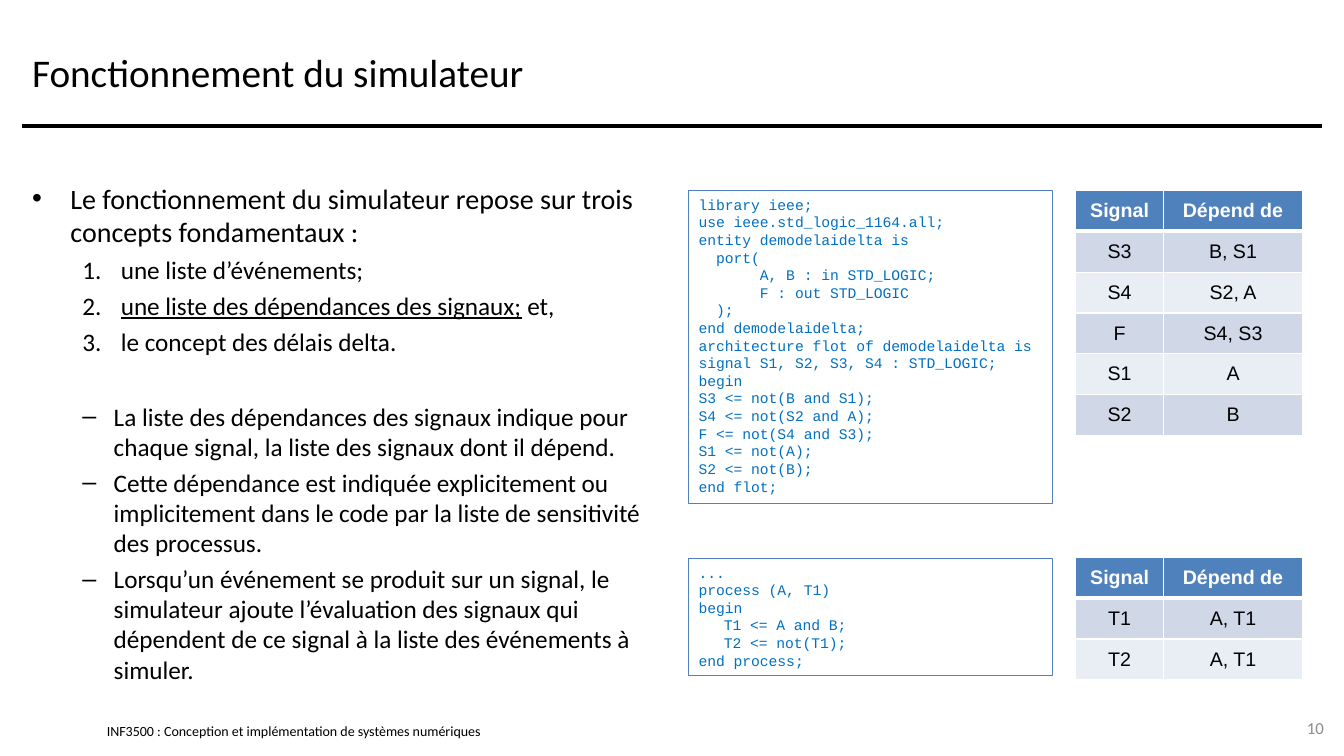
from dataclasses import dataclass

from lxml.etree import SubElement
from pptx import Presentation
from pptx.dml.color import RGBColor
from pptx.enum.shapes import MSO_CONNECTOR, MSO_SHAPE
from pptx.enum.text import MSO_ANCHOR, PP_ALIGN
from pptx.oxml.ns import qn
from pptx.util import Inches, Pt


@dataclass(frozen=True)
class Theme:
    text: str = "000000"
    muted: str = "8C8C8C"
    accent: str = "4F81BD"
    code: str = "0070C0"
    white: str = "FFFFFF"
    bands: tuple = ("D0D8E8", "E9EDF4")
    body_font: str = "Calibri"
    table_font: str = "Arial"
    code_font: str = "Courier New"
    title_size: float = 28
    lead_size: float = 20
    item_size: float = 18
    table_size: float = 14
    number_size: float = 12
    code_size: float = 10.5
    footer_size: float = 10


THEME = Theme()

LEAD = "Le fonctionnement du simulateur repose sur trois concepts fondamentaux :"
CONCEPTS = [
    [("une liste d’événements;", False)],
    [("une liste des dépendances des signaux;", True), (" et,", False)],
    [("le concept des délais delta.", False)],
]
REMARKS = [
    "La liste des dépendances des signaux indique pour chaque signal, "
    "la liste des signaux dont il dépend.",
    "Cette dépendance est indiquée explicitement ou implicitement dans le code "
    "par la liste de sensitivité des processus.",
    "Lorsqu’un événement se produit sur un signal, le simulateur ajoute l’évaluation "
    "des signaux qui dépendent de ce signal à la liste des événements à simuler.",
]
ENTITY_CODE = """library ieee;
use ieee.std_logic_1164.all;
entity demodelaidelta is
  port(
       A, B : in STD_LOGIC;
       F : out STD_LOGIC
  );
end demodelaidelta;
architecture flot of demodelaidelta is
signal S1, S2, S3, S4 : STD_LOGIC;
begin
S3 <= not(B and S1);
S4 <= not(S2 and A);
F <= not(S4 and S3);
S1 <= not(A);
S2 <= not(B);
end flot;"""
PROCESS_CODE = """...
process (A, T1)
begin
\tT1 <= A and B;
\tT2 <= not(T1);
end process;"""
HEADER = ("Signal", "Dépend de")
ENTITY_SIGNALS = [("S3", "B, S1"), ("S4", "S2, A"), ("F", "S4, S3"), ("S1", "A"), ("S2", "B")]
PROCESS_SIGNALS = [("T1", "A, T1"), ("T2", "A, T1")]


def style(paragraph, size, color=THEME.text, name=THEME.body_font, bold=False):
    font = paragraph.font
    font.size, font.name, font.bold = Pt(size), name, bold
    font.color.rgb = RGBColor.from_string(color)


def add_text_box(slide, left, top, width, height, anchor=MSO_ANCHOR.MIDDLE):
    box = slide.shapes.add_textbox(Inches(left), Inches(top), Inches(width), Inches(height))
    frame = box.text_frame
    frame.word_wrap = True
    frame.vertical_anchor = anchor
    return frame


def add_label(slide, text, left, top, width, height, size, color=THEME.text, align=PP_ALIGN.LEFT):
    frame = add_text_box(slide, left, top, width, height)
    paragraph = frame.paragraphs[0]
    paragraph.text = text
    paragraph.alignment = align
    style(paragraph, size, color)
    return frame


def add_rule(slide, left, right, y):
    line = slide.shapes.add_connector(
        MSO_CONNECTOR.STRAIGHT, Inches(left), Inches(y), Inches(right), Inches(y))
    line.line.color.rgb = RGBColor.from_string(THEME.text)
    line.line.width = Pt(3)
    SubElement(line._element.spPr, qn("a:effectLst"))


def add_item(frame, runs, size, margin, hanging, bullet, attributes, space_before):
    first = not frame.text
    paragraph = frame.paragraphs[0] if first else frame.add_paragraph()
    properties = paragraph._p.get_or_add_pPr()
    properties.set("marL", str(Inches(margin)))
    properties.set("indent", str(-Inches(hanging)))
    SubElement(properties, qn("a:buFont"), typeface="Arial")
    SubElement(properties, qn(bullet), attributes)
    if not first:
        paragraph.space_before = Pt(space_before)
    for text, underlined in runs:
        run = paragraph.add_run()
        run.text = text
        if underlined:
            run.font.underline = True
    style(paragraph, size)


def add_body(slide):
    frame = add_text_box(slide, 0.22, 1.75, 6.33, 5.08, MSO_ANCHOR.TOP)
    add_item(frame, [(LEAD, False)], THEME.lead_size, 0.38, 0.38, "a:buChar", {"char": "•"}, 0)
    for runs in CONCEPTS:
        add_item(frame, runs, THEME.item_size, 0.88, 0.38,
                 "a:buAutoNum", {"type": "arabicPeriod"}, 4)
    for index, text in enumerate(REMARKS):
        add_item(frame, [(text, False)], THEME.item_size, 0.81, 0.31,
                 "a:buChar", {"char": "–"}, 4 if index else 32)


def add_code(slide, code, top, height):
    box = slide.shapes.add_shape(
        MSO_SHAPE.RECTANGLE, Inches(6.83), Inches(top), Inches(3.61), Inches(height))
    box.shadow.inherit = False
    box.fill.background()
    box.line.color.rgb = RGBColor.from_string(THEME.accent)
    box.line.width = Pt(0.75)
    frame = box.text_frame
    frame.word_wrap = True
    frame.vertical_anchor = MSO_ANCHOR.TOP
    for index, line in enumerate(code.split("\n")):
        paragraph = frame.add_paragraph() if index else frame.paragraphs[0]
        paragraph.text = line
        paragraph.alignment = PP_ALIGN.LEFT
        tabs = SubElement(paragraph._p.get_or_add_pPr(), qn("a:tabLst"))
        for position in (0.25, 0.5):
            SubElement(tabs, qn("a:tab"), pos=str(Inches(position)), algn="l")
        style(paragraph, THEME.code_size, THEME.code, THEME.code_font)


def set_borders(cell, bottom):
    properties = cell._tc.get_or_add_tcPr()
    widths = {"a:lnL": 1, "a:lnR": 1, "a:lnT": 1, "a:lnB": bottom}
    for position, (side, width) in enumerate(widths.items()):
        line = SubElement(properties, qn(side), w=str(Pt(width)))
        fill = SubElement(line, qn("a:solidFill"))
        SubElement(fill, qn("a:srgbClr"), val=THEME.white)
        properties.insert(position, line)


def add_signal_table(slide, signals, top):
    rows = [HEADER, *signals]
    row_height = 0.405
    table = slide.shapes.add_table(
        len(rows), len(HEADER), Inches(10.67), Inches(top),
        Inches(2.25), Inches(row_height * len(rows))).table
    for column, width in zip(table.columns, (0.87, 1.38)):
        column.width = Inches(width)
    for index, values in enumerate(rows):
        header = index == 0
        fill = THEME.accent if header else THEME.bands[(index - 1) % 2]
        for column, value in enumerate(values):
            cell = table.cell(index, column)
            cell.text = value
            cell.vertical_anchor = MSO_ANCHOR.MIDDLE
            cell.fill.solid()
            cell.fill.fore_color.rgb = RGBColor.from_string(fill)
            set_borders(cell, 3 if header else 1)
            paragraph = cell.text_frame.paragraphs[0]
            paragraph.alignment = PP_ALIGN.CENTER
            style(paragraph, THEME.table_size, THEME.white if header else THEME.text,
                  THEME.table_font, header)


def main():
    presentation = Presentation()
    presentation.slide_width, presentation.slide_height = Inches(13.33), Inches(7.5)
    slide = presentation.slides.add_slide(presentation.slide_layouts[6])

    # Title, rule and footer
    add_label(slide, "Fonctionnement du simulateur", 0.22, 0.17, 12.89, 1.08, THEME.title_size)
    add_rule(slide, 0.22, 13.11, 1.25)
    footer = add_label(slide, "INF3500 : Conception et implémentation de systèmes numériques",
                       1.06, 7.17, 5.11, 0.17, THEME.footer_size)
    footer.margin_left = footer.margin_right = footer.margin_top = footer.margin_bottom = 0
    add_label(slide, "10", 12.56, 7.02, 0.67, 0.4, THEME.number_size, THEME.muted, PP_ALIGN.RIGHT)

    # Explanations
    add_body(slide)

    # Code listings with their dependency tables
    add_code(slide, ENTITY_CODE, 1.89, 3.11)
    add_signal_table(slide, ENTITY_SIGNALS, 1.89)
    add_code(slide, PROCESS_CODE, 5.54, 1.16)
    add_signal_table(slide, PROCESS_SIGNALS, 5.53)

    presentation.save("out.pptx")


if __name__ == "__main__":
    main()
